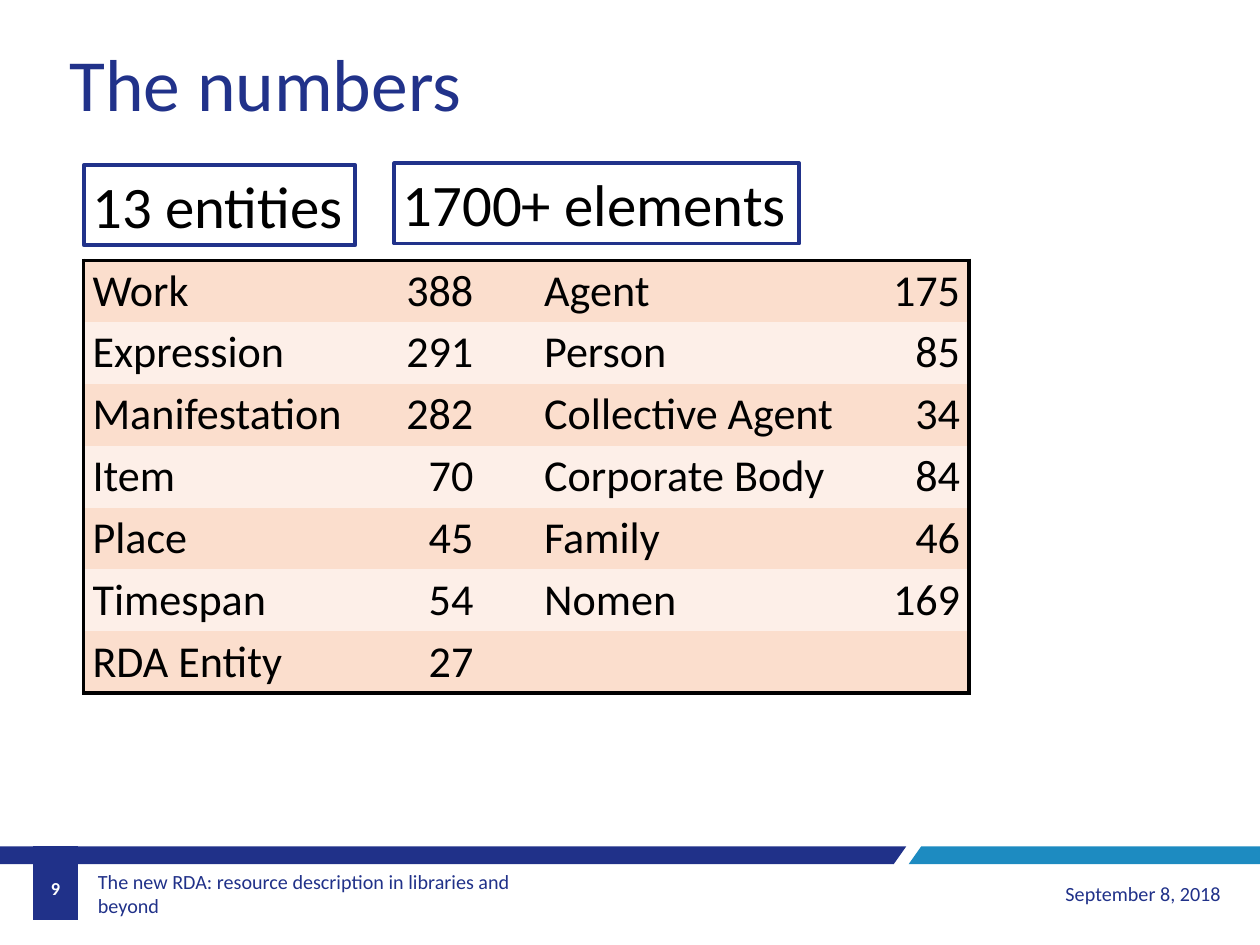
from dataclasses import dataclass

from lxml.etree import SubElement
from pptx import Presentation
from pptx.dml.color import RGBColor
from pptx.enum.shapes import MSO_SHAPE as Preset
from pptx.enum.text import MSO_ANCHOR as Anchor, MSO_AUTO_SIZE as AutoSize, PP_ALIGN as Align
from pptx.oxml.ns import qn
from pptx.shapes.base import BaseShape
from pptx.slide import Slide
from pptx.table import _Cell as Cell
from pptx.text.text import TextFrame
from pptx.util import Cm, Pt

NAVY = "203189"
TITLE_BLUE = "21328A"
SKY = "1D8BC1"
BLACK = "000000"
WHITE = "FFFFFF"
BANDS = ("FBDECD", "FDEFE8")
ROW_HEIGHT = 1.78
COLUMN_WIDTHS = (8.39, 3.08, 1.53, 9.98, 2.5)
COUNTS = (
    ("Work", "388", "", "Agent", "175"),
    ("Expression", "291", "", "Person", "85"),
    ("Manifestation", "282", "", "Collective Agent", "34"),
    ("Item", "70", "", "Corporate Body", "84"),
    ("Place", "45", "", "Family", "46"),
    ("Timespan", "54", "", "Nomen", "169"),
    ("RDA Entity", "27", "", "", ""),
)


@dataclass
class Stripe:
    points: tuple[tuple[float, float], ...]
    color: str


@dataclass
class Caption:
    text: str
    left: float
    top: float
    width: float
    height: float
    size: float
    color: str
    align: Align = Align.LEFT
    anchor: Anchor = Anchor.MIDDLE
    bold: bool = False
    inset_x: float = 0.25
    inset_y: float = 0.13


@dataclass
class Label:
    text: str
    left: float
    top: float
    width: float


STRIPES = (
    Stripe(((26.09, 24.36), (0, 24.36), (0, 24.87), (25.73, 24.87)), NAVY),
    Stripe(((36.27, 24.36), (26.52, 24.36), (26.16, 24.87), (36.27, 24.87)), SKY),
    Stripe(((0.94, 24.36), (2.26, 24.36), (2.26, 26.49), (0.94, 26.49)), NAVY),
)
CAPTIONS = (
    Caption("The new RDA: resource description in libraries and beyond",
            2.64, 25.02, 14.02, 1.4, 16.4, NAVY, inset_x=0.18, inset_y=0.1),
    Caption("September 8, 2018", 26.09, 25.02, 9.3, 1.4, 16.4, NAVY, Align.RIGHT),
    Caption("9", 0.94, 24.87, 1.32, 1.4, 14.9, WHITE, Align.CENTER, bold=True),
    Caption("The numbers", 1.75, 0.89, 14.05, 3.18, 60, TITLE_BLUE,
            anchor=Anchor.TOP, inset_y=0.2),
)
LABELS = (
    Label("13 entities", 2.41, 4.75, 7.82),
    Label("1700+ elements", 11.35, 4.7, 11.66),
)


def rgb(color: str) -> RGBColor:
    return RGBColor.from_string(color)


def write(frame: TextFrame, text: str, *, size: float, color: str = BLACK,
          align: Align = Align.LEFT, bold: bool = False) -> None:
    para = frame.paragraphs[0]
    para.alignment = align
    span = para.add_run()
    span.text = text
    span.font.name = "Calibri"
    span.font.size = Pt(size)
    span.font.bold = bold
    span.font.color.rgb = rgb(color)


def draw_stripe(slide: Slide, stripe: Stripe) -> BaseShape:
    first, *others = [(Cm(x), Cm(y)) for x, y in stripe.points]
    builder = slide.shapes.build_freeform(*first)
    builder.add_line_segments(others, close=True)
    shape = builder.convert_to_shape()
    shape.shadow.inherit = False
    shape.fill.solid()
    shape.fill.fore_color.rgb = rgb(stripe.color)
    shape.line.fill.background()
    return shape


def draw_caption(slide: Slide, caption: Caption) -> None:
    box = slide.shapes.add_textbox(Cm(caption.left), Cm(caption.top),
                                   Cm(caption.width), Cm(caption.height))
    frame = box.text_frame
    frame.word_wrap = True
    frame.vertical_anchor = caption.anchor
    frame.margin_left = frame.margin_right = Cm(caption.inset_x)
    frame.margin_top = frame.margin_bottom = Cm(caption.inset_y)
    write(frame, caption.text, size=caption.size, color=caption.color,
          align=caption.align, bold=caption.bold)


def draw_label(slide: Slide, label: Label) -> None:
    box = slide.shapes.add_shape(Preset.RECTANGLE, Cm(label.left), Cm(label.top),
                                 Cm(label.width), Cm(2.31))
    box.shadow.inherit = False
    box.fill.background()
    box.line.color.rgb = rgb(TITLE_BLUE)
    box.line.width = Pt(3)
    frame = box.text_frame
    frame.word_wrap = False
    frame.auto_size = AutoSize.SHAPE_TO_FIT_TEXT
    frame.vertical_anchor = Anchor.TOP
    write(frame, label.text, size=48)


def set_borders(cell: Cell, outer: dict[str, bool]) -> None:
    properties = cell._tc.get_or_add_tcPr()
    for side, visible in outer.items():
        line = SubElement(properties, qn(f"a:ln{side}"), w=str(Pt(3)))
        if visible:
            fill = SubElement(line, qn("a:solidFill"))
            SubElement(fill, qn("a:srgbClr"), val=BLACK)
        else:
            SubElement(line, qn("a:noFill"))


def draw_counts(slide: Slide) -> None:
    last_row, last_column = len(COUNTS) - 1, len(COLUMN_WIDTHS) - 1
    table = slide.shapes.add_table(
        len(COUNTS), len(COLUMN_WIDTHS), Cm(2.41), Cm(7.49),
        Cm(sum(COLUMN_WIDTHS)), Cm(ROW_HEIGHT * len(COUNTS))).table
    table.first_row = table.horz_banding = False
    for column, width in zip(table.columns, COLUMN_WIDTHS):
        column.width = Cm(width)
    for i, values in enumerate(COUNTS):
        table.rows[i].height = Cm(ROW_HEIGHT)
        for j, value in enumerate(values):
            cell = table.cell(i, j)
            cell.margin_top = cell.margin_bottom = Cm(0.11)
            set_borders(cell, {"L": j == 0, "R": j == last_column,
                               "T": i == 0, "B": i == last_row})
            cell.fill.solid()
            cell.fill.fore_color.rgb = rgb(BANDS[i % 2])
            if value:
                write(cell.text_frame, value, size=36,
                      align=Align.RIGHT if value.isdigit() else Align.LEFT)


def main() -> None:
    deck = Presentation()
    deck.slide_width, deck.slide_height = Cm(36.27), Cm(27.2)
    slide = deck.slides.add_slide(deck.slide_layouts[6])
    for stripe in STRIPES:
        draw_stripe(slide, stripe)
    for caption in CAPTIONS:
        draw_caption(slide, caption)
    for label in LABELS:
        draw_label(slide, label)
    draw_counts(slide)
    deck.save("out.pptx")


if __name__ == "__main__":
    main()
